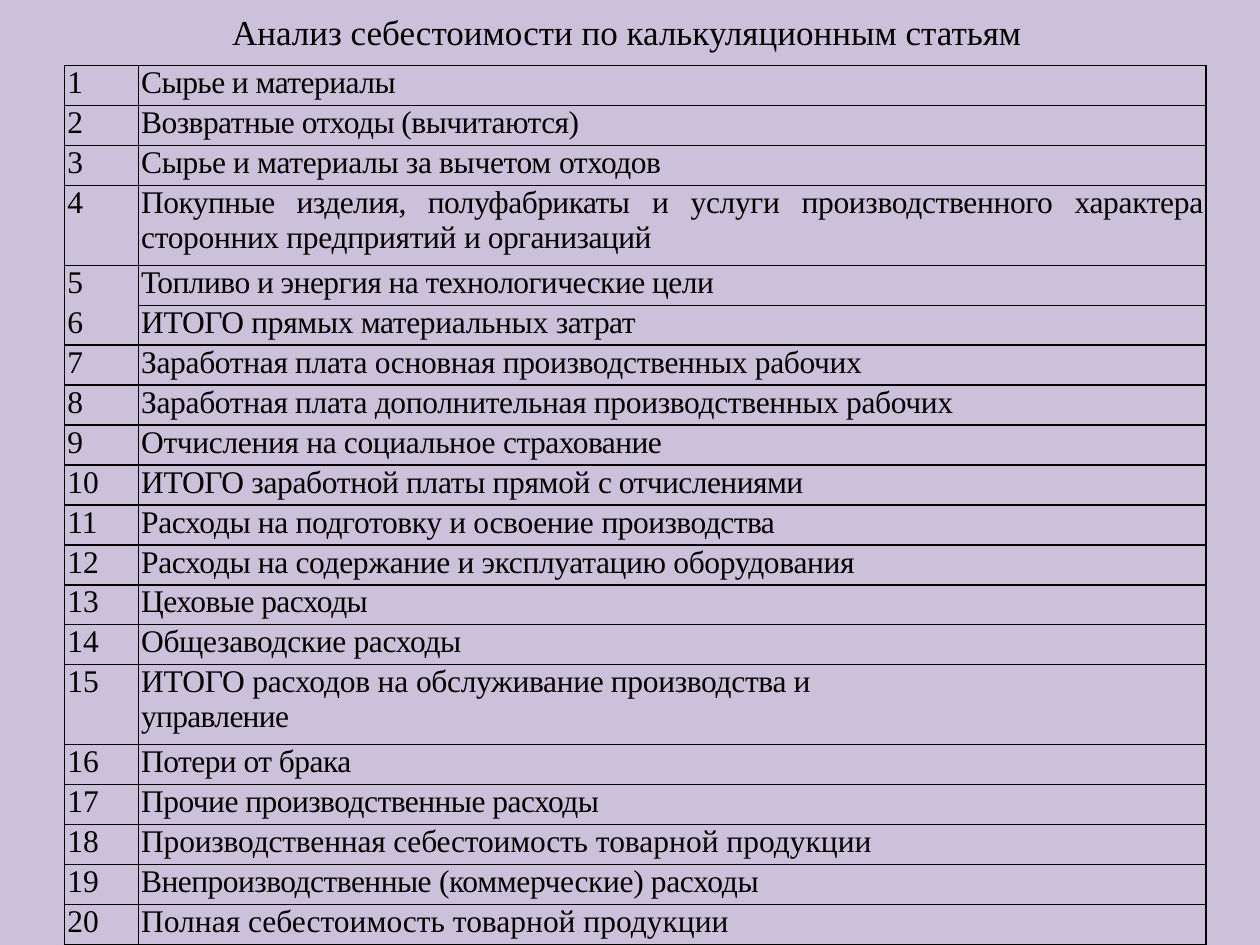
from dataclasses import dataclass

from lxml import etree
from pptx import Presentation
from pptx.dml import color
from pptx.enum import text as t
from pptx.oxml import ns
from pptx.util import Pt

FONT = "Times New Roman"
INK = "000000"
LILAC = "CCC1DA"
ROW_HEIGHT = 22.84
COLUMN_WIDTHS = (42.2, 610)
EDGES = {"left": "lnL", "right": "lnR", "top": "lnT", "bottom": "lnB"}


@dataclass(frozen=True)
class Span:
    text: str
    spacing: float = 0


@dataclass(frozen=True)
class CostItem:
    lines: tuple[tuple[Span, ...], ...]
    height: int = 1
    open_edge: str = ""


def item(*spans: Span, height: int = 1, open_edge: str = "") -> CostItem:
    return CostItem((spans,), height, open_edge)


ITEMS = (
    item(Span("Сырье и материалы", -0.3)),
    item(Span("Возвратные отходы (вычитаются)", -0.3)),
    item(Span("Сырье и материалы за вычетом ", -0.2), Span("отходов", -0.3)),
    item(
        Span("Покупные изделия, полуфабрикаты ", -0.3),
        Span("и услуги производственного характера сторонних предприятий ", -0.2),
        Span("и организаций", -0.3),
        height=2,
    ),
    item(Span("Топливо и энергия на технологические цели", -0.3), open_edge="bottom"),
    item(Span("ИТОГО прямых материальных ", -0.2), Span("затрат", -0.3), open_edge="top"),
    item(Span("Заработная плата основная производственных рабочих", -0.2)),
    item(Span("Заработная плата дополнительная производственных рабочих", -0.2)),
    item(Span("Отчисления на социальное ", -0.2), Span("страхование", -0.3)),
    item(Span("ИТОГО заработной платы прямой ", -0.2), Span("с отчислениями", -0.3)),
    item(Span("Расходы на подготовку и освоение ", -0.2), Span("производства", -0.3)),
    item(Span("Расходы на содержание и эксплуатацию оборудования", -0.2)),
    item(Span("Цеховые расходы", -0.3)),
    item(Span("Общезаводские расходы", -0.2)),
    CostItem(
        (
            (Span("ИТОГО расходов на ", -0.1), Span("обслуживание производства и", -0.2)),
            (Span("управление", -0.4),),
        ),
        height=2,
    ),
    item(Span("Потери от брака", -0.3)),
    item(Span("Прочие производственные расходы", -0.3)),
    item(Span("Производственная себестоимость ", -0.1), Span("товарной продукции")),
    item(Span("Внепроизводственные ", -0.3), Span("(коммерческие) расходы", -0.2)),
    item(Span("Полная себестоимость товарной продукции")),
)


def rgb(value: str) -> color.RGBColor:
    return color.RGBColor.from_string(value)


def add_span(para, text: str, *, size: float = 18, ink: str = INK, spacing: float = 0) -> None:
    para.alignment = t.PP_ALIGN.JUSTIFY
    span = para.add_run()
    span.text = text
    span.font.name = FONT
    span.font.size = Pt(size)
    span.font.color.rgb = rgb(ink)
    if spacing:
        span.font._element.set("spc", str(round(spacing * 100)))


def draw_borders(cell, open_edge: str) -> None:
    properties = cell._tc.get_or_add_tcPr()
    for edge, tag in EDGES.items():
        line = etree.SubElement(properties, ns.qn(f"a:{tag}"), w=str(Pt(1)))
        if edge == open_edge:
            etree.SubElement(line, ns.qn("a:noFill"))
        else:
            fill = etree.SubElement(line, ns.qn("a:solidFill"))
            etree.SubElement(fill, ns.qn("a:srgbClr"), val=INK)


def fill_cell(cell, lines: tuple[tuple[Span, ...], ...], open_edge: str = "") -> None:
    cell.margin_left = cell.margin_right = Pt(1.6)
    cell.margin_top = cell.margin_bottom = Pt(0)
    draw_borders(cell, open_edge)
    cell.fill.background()
    frame = cell.text_frame
    for index, spans in enumerate(lines):
        para = frame.add_paragraph() if index else frame.paragraphs[0]
        for span in spans:
            add_span(para, span.text, spacing=span.spacing)


def add_title(page, text: str) -> None:
    box = page.shapes.add_textbox(Pt(125.5), Pt(2), Pt(470), Pt(31.5))
    frame = box.text_frame
    frame.word_wrap = False
    frame.auto_size = t.MSO_AUTO_SIZE.SHAPE_TO_FIT_TEXT
    frame.vertical_anchor = t.MSO_ANCHOR.MIDDLE
    add_span(frame.paragraphs[0], text, size=20)


def add_cost_table(page, items: tuple[CostItem, ...]) -> None:
    height = ROW_HEIGHT * sum(entry.height for entry in items)
    table = page.shapes.add_table(
        len(items), len(COLUMN_WIDTHS), Pt(36.9), Pt(37.5), Pt(sum(COLUMN_WIDTHS)), Pt(height)
    ).table
    table.first_row = table.horz_banding = False
    for column, width in zip(table.columns, COLUMN_WIDTHS):
        column.width = Pt(width)
    for index, entry in enumerate(items):
        table.rows[index].height = Pt(ROW_HEIGHT * entry.height)
        fill_cell(table.cell(index, 0), ((Span(str(index + 1)),),), entry.open_edge)
        fill_cell(table.cell(index, 1), entry.lines)


def main() -> None:
    deck = Presentation()
    deck.slide_width, deck.slide_height = Pt(720), Pt(540)
    page = deck.slides.add_slide(deck.slide_layouts[6])
    page.background.fill.solid()
    page.background.fill.fore_color.rgb = rgb(LILAC)
    add_cost_table(page, ITEMS)
    add_title(page, "Анализ себестоимости по калькуляционным статьям")
    deck.save("out.pptx")


if __name__ == "__main__":
    main()
